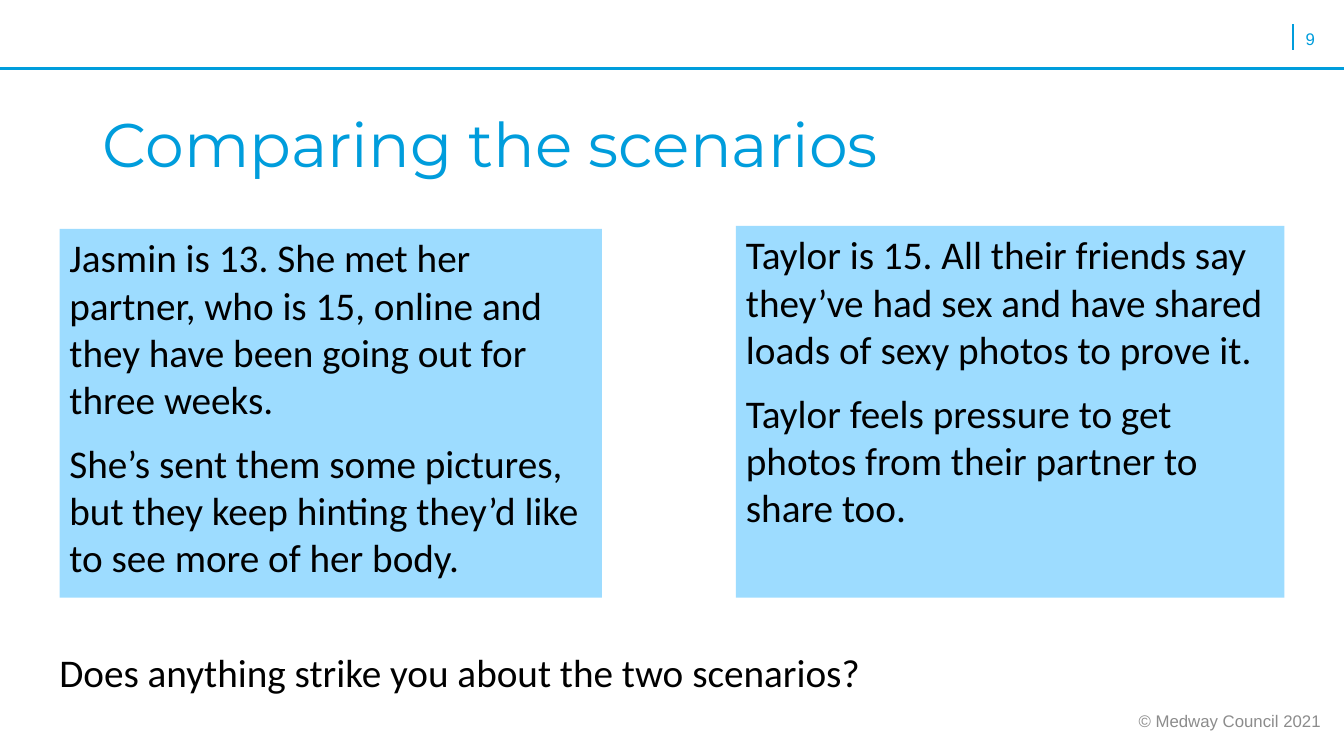
import pptx
import pptx.dml.color
import pptx.enum.shapes
import pptx.enum.text
import pptx.oxml.ns
import pptx.util
from lxml import etree
from pptx.util import Inches

BLUE = "009DDC"
PANEL_BLUE = "9DDCFF"
GREY = "8C8C8C"
BLACK = "000000"

ALIGN = pptx.enum.text.PP_ALIGN
ANCHOR = pptx.enum.text.MSO_ANCHOR

JASMIN = [
    "Jasmin is 13. She met her partner, who is 15, online and they have been going out for three weeks.",
    "She’s sent them some pictures, but they keep hinting they’d like to see more of her body.",
]
TAYLOR = [
    "Taylor is 15. All their friends say they’ve had sex and have shared loads of sexy photos to prove it.",
    "Taylor feels pressure to get photos from their partner to share too.",
]


def rgb(hex_colour):
    return pptx.dml.color.RGBColor.from_string(hex_colour)


def write(shape, paragraphs, font, size, colour, align=ALIGN.LEFT, anchor=ANCHOR.TOP, gap=0):
    """Fill a shape with paragraphs, with gap points before and after each inner edge."""
    frame = shape.text_frame
    frame.word_wrap = True
    frame.vertical_anchor = anchor
    for index, text in enumerate(paragraphs):
        paragraph = frame.paragraphs[0] if index == 0 else frame.add_paragraph()
        paragraph.text = text
        paragraph.alignment = align
        paragraph.space_before = pptx.util.Pt(gap if index else 0)
        paragraph.space_after = pptx.util.Pt(gap)
        paragraph.font.name = font
        paragraph.font.size = pptx.util.Pt(size)
        paragraph.font.color.rgb = rgb(colour)


def add_label(slide, box, text, font, size, colour, **layout):
    label = slide.shapes.add_textbox(*map(Inches, box))
    write(label, [text], font, size, colour, **layout)


def add_scenario(slide, box, paragraphs):
    panel = slide.shapes.add_shape(pptx.enum.shapes.MSO_SHAPE.RECTANGLE, *map(Inches, box))
    panel.shadow.inherit = False
    panel.fill.solid()
    panel.fill.fore_color.rgb = rgb(PANEL_BLUE)
    panel.line.fill.background()
    write(panel, paragraphs, "Calibri", 28, BLACK, gap=6)


def add_rule(slide, ends, width):
    rule = slide.shapes.add_connector(
        pptx.enum.shapes.MSO_CONNECTOR.STRAIGHT, *map(Inches, ends))
    rule.line.color.rgb = rgb(BLUE)
    rule.line.width = pptx.util.Pt(width)
    etree.SubElement(rule._element.spPr, pptx.oxml.ns.qn("a:effectLst"))


def set_title(slide, box, text):
    title = slide.shapes.title
    title.left, title.top, title.width, title.height = map(Inches, box)
    write(title, [text], "Montserrat", 44, BLUE)
    title.text_frame.paragraphs[0].line_spacing = 0.9


def main():
    deck = pptx.Presentation()
    deck.slide_width, deck.slide_height = Inches(13.33), Inches(7.5)
    slide = deck.slides.add_slide(deck.slide_layouts[5])

    add_rule(slide, (12.82, 0.24, 12.82, 0.5), 1.5)
    add_rule(slide, (0, 0.68, 13.33, 0.68), 2.25)
    add_label(slide, (12.85, 0.24, 0.42, 0.26), "9", "Arial", 12, BLUE)
    add_label(slide, (10.86, 6.95, 2.34, 0.4), "© Medway Council 2021", "Arial", 12, GREY,
              align=ALIGN.RIGHT, anchor=ANCHOR.MIDDLE)

    set_title(slide, (0.92, 1.08, 11.5, 1.45), "Comparing the scenarios")
    add_scenario(slide, (7.3, 2.24, 5.44, 3.69), TAYLOR)
    add_scenario(slide, (0.59, 2.27, 5.38, 3.66), JASMIN)
    add_label(slide, (0.49, 6.38, 9.31, 0.57),
              "Does anything strike you about the two scenarios?", "Calibri", 28, BLACK)

    deck.save("out.pptx")


if __name__ == "__main__":
    main()
